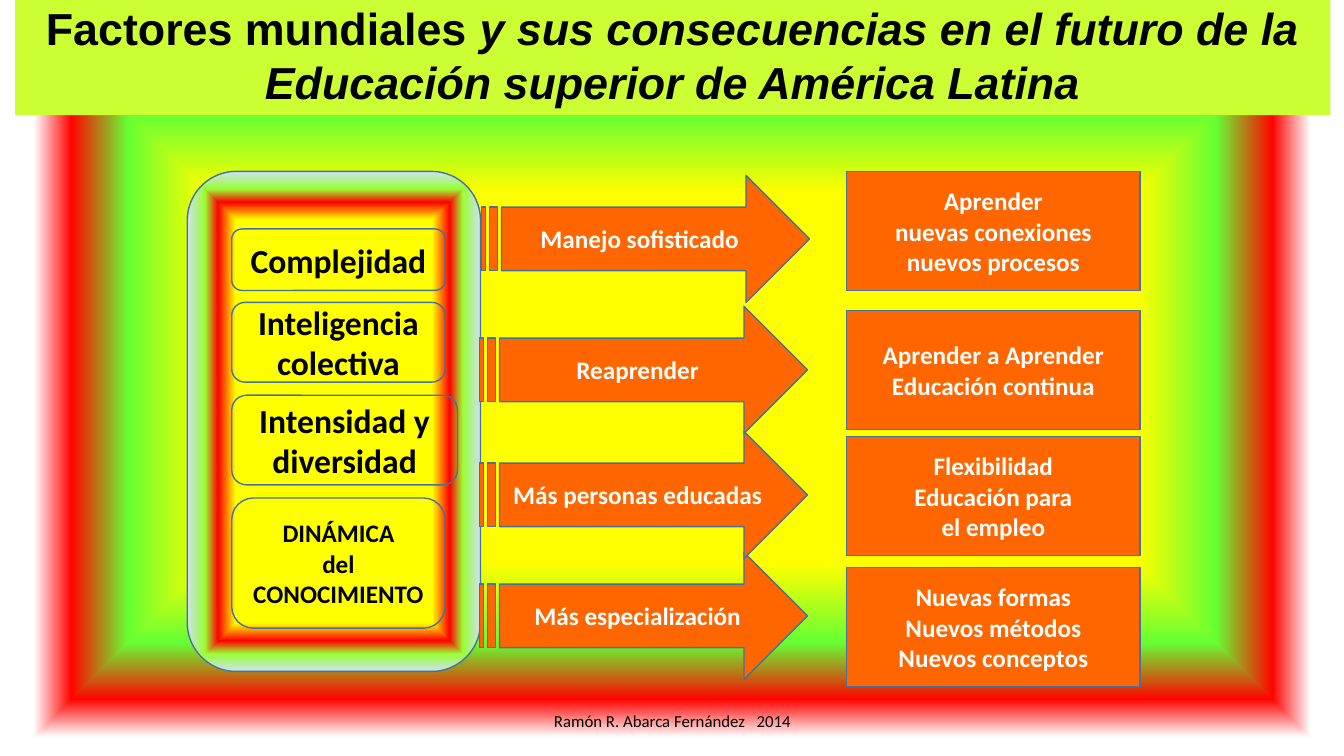
from dataclasses import dataclass

from lxml import etree
from pptx import Presentation
from pptx.dml.color import RGBColor
from pptx.enum.shapes import MSO_SHAPE
from pptx.enum.text import MSO_ANCHOR, PP_ALIGN
from pptx.oxml.ns import qn
from pptx.util import Cm, Pt

RECTANGLE = MSO_SHAPE.RECTANGLE
ROUNDED = MSO_SHAPE.ROUNDED_RECTANGLE
ARROW = MSO_SHAPE.STRIPED_RIGHT_ARROW
MIDDLE, TOP = MSO_ANCHOR.MIDDLE, MSO_ANCHOR.TOP
CENTER = PP_ALIGN.CENTER

BLACK, WHITE = "000000", "FFFFFF"
ORANGE, LIME, OUTLINE = "FF6600", "CCFF33", "43739E"
BACKGROUND_STOPS = ((49, "FFFF00"), (70, "66FF33"), (85, "FF0300"), (95, "FFFFFF"))
PANEL_STOPS = ((67, "FFFF00"), (79, "FF0000"), (88, "99FF33"), (100, "CEE1F2"))


@dataclass(frozen=True)
class Box:
    left: float
    top: float
    width: float
    height: float
    lines: tuple[str, ...] = ()
    kind: MSO_SHAPE = RECTANGLE
    fill: str | None = None
    line: str | None = OUTLINE
    color: str = WHITE
    size: int = 18


def arrow(top: float, text: str, left: float = 12.09) -> Box:
    return Box(left, top, 8.26, 3.2, (text,), ARROW, ORANGE)


def card(top: float, *lines: str) -> Box:
    return Box(21.34, top, 7.39, 3, lines, fill=ORANGE)


def factor(top: float, height: float, *lines: str, width: float = 5.38, size: int = 24) -> Box:
    return Box(5.84, top, width, height, lines, ROUNDED, color=BLACK, size=size)


TITLE = Box(0.38, -0.1, 33.15, 3, fill=LIME, line=None, color=BLACK, size=32)
PANEL = Box(4.72, 4.32, 7.39, 12.6, kind=ROUNDED)
CREDIT = Box(11.23, 17.65, 11.43, 1.02, color=BLACK, size=12)
ARROWS = (
    arrow(13.92, "Más especialización"),
    arrow(10.87, "Más personas educadas"),
    arrow(7.72, "Reaprender"),
    arrow(4.42, "Manejo sofisticado", left=12.14),
)
CARDS = (
    card(14.3, "Nuevas formas", "Nuevos métodos", "Nuevos conceptos"),
    card(11, "Flexibilidad", "Educación para", "el empleo"),
    card(7.82, "Aprender a Aprender", "Educación continua"),
    card(4.32, "Aprender", "nuevas conexiones", "nuevos procesos"),
)
FACTORS = (
    factor(12.55, 3.28, "DINÁMICA", "del", "CONOCIMIENTO", size=18),
    factor(5.77, 1.55, "Complejidad"),
    factor(9.96, 2.26, "Intensidad y", "diversidad", width=5.69),
    factor(7.62, 2.01, "Inteligencia", "colectiva"),
)


def rgb(value: str) -> RGBColor:
    return RGBColor.from_string(value)


def place(box: Box) -> tuple[Cm, Cm, Cm, Cm]:
    return Cm(box.left), Cm(box.top), Cm(box.width), Cm(box.height)


def paint_gradient(fill, element, stops: tuple[tuple[int, str], ...]) -> None:
    fill.gradient()
    gradient = element.find(".//" + qn("a:gradFill"))
    for child in list(gradient):
        gradient.remove(child)
    stop_list = etree.SubElement(gradient, qn("a:gsLst"))
    for position, color in stops:
        stop = etree.SubElement(stop_list, qn("a:gs"), pos=str(position * 1000))
        etree.SubElement(stop, qn("a:srgbClr"), val=color)
    path = etree.SubElement(gradient, qn("a:path"), {"path": "rect"})
    etree.SubElement(path, qn("a:fillToRect"), dict.fromkeys("ltrb", "50000"))


def add_run(paragraph, text: str, box: Box, font_name: str = "Calibri",
            bold: bool = True, italic: bool = False) -> None:
    run = paragraph.add_run()
    run.text = text
    font_format = {"name": font_name, "size": Pt(box.size), "bold": bold, "italic": italic}
    for attribute, value in font_format.items():
        setattr(run.font, attribute, value)
    run.font.color.rgb = rgb(box.color)


def prepare_text(shape, anchor: MSO_ANCHOR):
    frame = shape.text_frame
    frame_format = {"word_wrap": True, "vertical_anchor": anchor}
    for attribute, value in frame_format.items():
        setattr(frame, attribute, value)
    frame.paragraphs[0].alignment = CENTER
    return frame


def add_box(slide, box: Box, anchor: MSO_ANCHOR = MIDDLE):
    shape = slide.shapes.add_shape(box.kind, *place(box))
    shape.shadow.inherit = False
    if box.fill:
        shape.fill.solid()
        shape.fill.fore_color.rgb = rgb(box.fill)
    else:
        shape.fill.background()
    if box.line:
        shape.line.color.rgb = rgb(box.line)
        shape.line.width = Pt(1)
    else:
        shape.line.fill.background()
    frame = prepare_text(shape, anchor)
    for index, text in enumerate(box.lines):
        paragraph = frame.add_paragraph() if index else frame.paragraphs[0]
        paragraph.alignment = CENTER
        add_run(paragraph, text, box)
    return shape


def add_title(slide) -> None:
    paragraph = add_box(slide, TITLE, TOP).text_frame.paragraphs[0]
    add_run(paragraph, "Factores mundiales ", TITLE, "Arial")
    add_run(paragraph, "y sus consecuencias en el futuro de la Educación superior de América Latina",
            TITLE, "Arial", italic=True)


def add_credit(slide) -> None:
    shape = slide.shapes.add_textbox(*place(CREDIT))
    paragraph = prepare_text(shape, MIDDLE).paragraphs[0]
    for text in ("Ramón R. Abarca Fernández", " ", "2014"):
        add_run(paragraph, text, CREDIT, bold=False)
    gap = shape.element.findall(".//" + qn("a:rPr"))[1]
    gap.set("spc", "540")


def main() -> None:
    presentation = Presentation()
    presentation.slide_width, presentation.slide_height = Cm(33.87), Cm(19.05)
    slide = presentation.slides.add_slide(presentation.slide_layouts[6])
    paint_gradient(slide.background.fill, slide.element, BACKGROUND_STOPS)
    add_title(slide)
    panel = add_box(slide, PANEL)
    paint_gradient(panel.fill, panel.element, PANEL_STOPS)
    for box in ARROWS + CARDS:
        add_box(slide, box)
    add_credit(slide)
    for box in FACTORS:
        add_box(slide, box)
    presentation.save("out.pptx")


if __name__ == "__main__":
    main()
